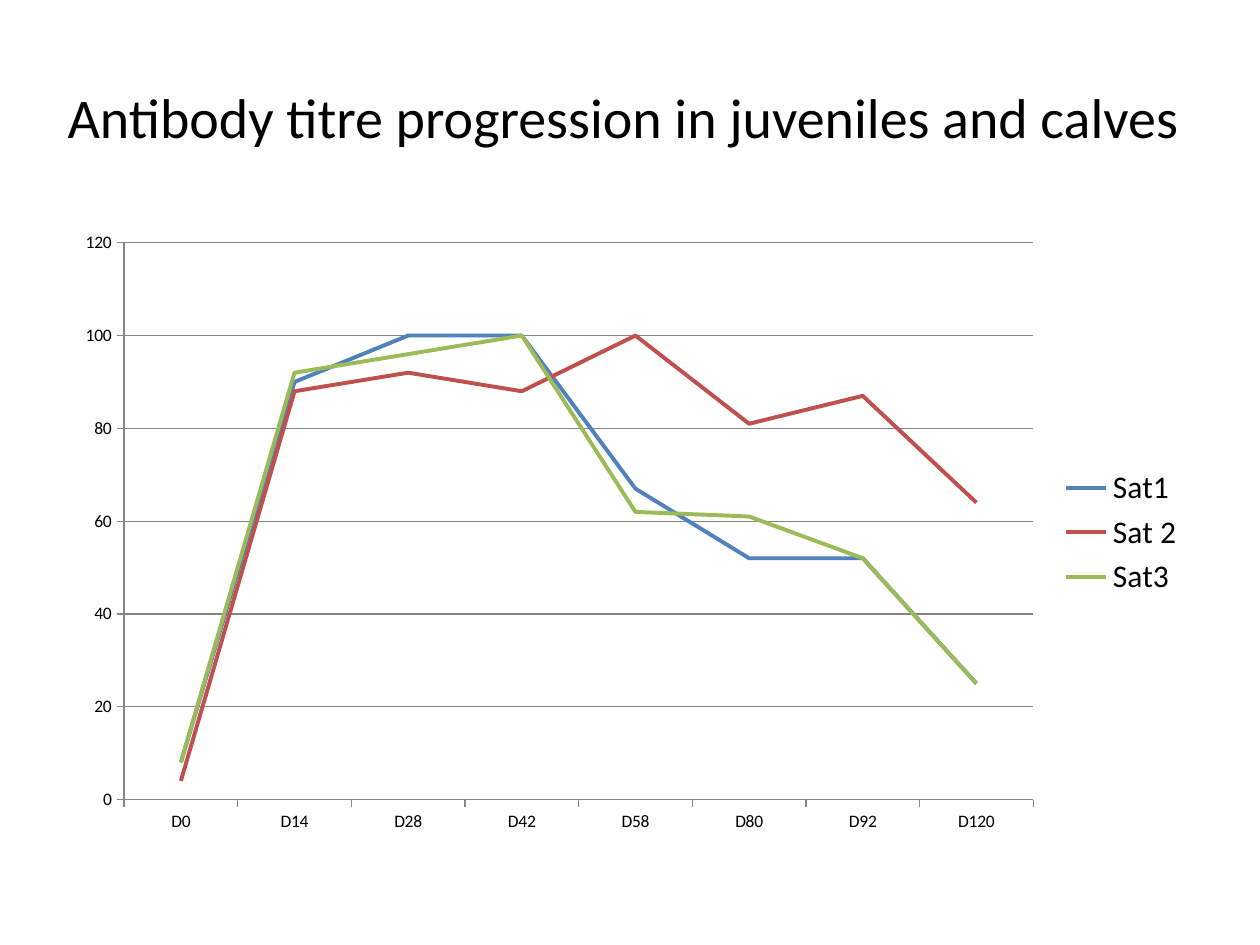
from dataclasses import dataclass

from pptx import Presentation
from pptx.chart.data import CategoryChartData
from pptx.dml.color import RGBColor
from pptx.enum.chart import XL_CHART_TYPE, XL_LEGEND_POSITION, XL_MARKER_STYLE, XL_TICK_MARK
from pptx.enum.text import MSO_ANCHOR, PP_ALIGN
from pptx.util import Pt


@dataclass(frozen=True)
class Theme:
    font: str = "Calibri"
    text: RGBColor = RGBColor(0, 0, 0)
    axis: RGBColor = RGBColor(0x86, 0x86, 0x86)
    series: tuple = ("4F81BD", "C0504D", "9BBB59")
    title_size: Pt = Pt(32)
    axis_size: Pt = Pt(10)
    legend_size: Pt = Pt(18)


theme = Theme()


def style_font(font, size):
    font.name = theme.font
    font.size = size
    font.bold = False
    font.color.rgb = theme.text


def style_line(line, color, width):
    line.color.rgb = color
    line.width = width


days = ["D0", "D14", "D28", "D42", "D58", "D80", "D92", "D120"]
titres = {
    "Sat1": [8, 90, 100, 100, 67, 52, 52, 25],
    "Sat 2": [4, 88, 92, 88, 100, 81, 87, 64],
    "Sat3": [8, 92, 96, 100, 62, 61, 52, 25],
}

deck = Presentation()
deck.slide_width, deck.slide_height = Pt(720), Pt(540)
page = deck.slides.add_slide(deck.slide_layouts[5])

# Title
title = page.shapes.title
title.left, title.top, title.width, title.height = Pt(0), Pt(21.6), Pt(720), Pt(90)
frame = title.text_frame
frame.text = "Antibody titre progression in juveniles and calves "
frame.vertical_anchor = MSO_ANCHOR.MIDDLE
para = frame.paragraphs[0]
para.alignment = PP_ALIGN.CENTER
style_font(para.runs[0].font, theme.title_size)

# Titre chart
chart_data = CategoryChartData()
chart_data.categories = days
for name, values in titres.items():
    chart_data.add_series(name, values)
chart = page.shapes.add_chart(
    XL_CHART_TYPE.LINE, Pt(36), Pt(126), Pt(648), Pt(356.4), chart_data
).chart
chart.has_title = False
style_font(chart.font, theme.axis_size)

for series, color in zip(chart.plots[0].series, theme.series):
    series.smooth = False
    series.marker.style = XL_MARKER_STYLE.NONE
    style_line(series.format.line, RGBColor.from_string(color), Pt(2.25))
chart.plots[0].vary_by_categories = False

for axis in (chart.category_axis, chart.value_axis):
    axis.major_tick_mark = XL_TICK_MARK.OUTSIDE
    axis.minor_tick_mark = XL_TICK_MARK.NONE
    style_line(axis.format.line, theme.axis, Pt(0.75))

scale = chart.value_axis
scale.minimum_scale, scale.maximum_scale, scale.major_unit = 0, 120, 20
scale.has_major_gridlines = True
style_line(scale.major_gridlines.format.line, theme.axis, Pt(0.75))

chart.has_legend = True
chart.legend.position = XL_LEGEND_POSITION.RIGHT
chart.legend.include_in_layout = False
style_font(chart.legend.font, theme.legend_size)

deck.save("out.pptx")
